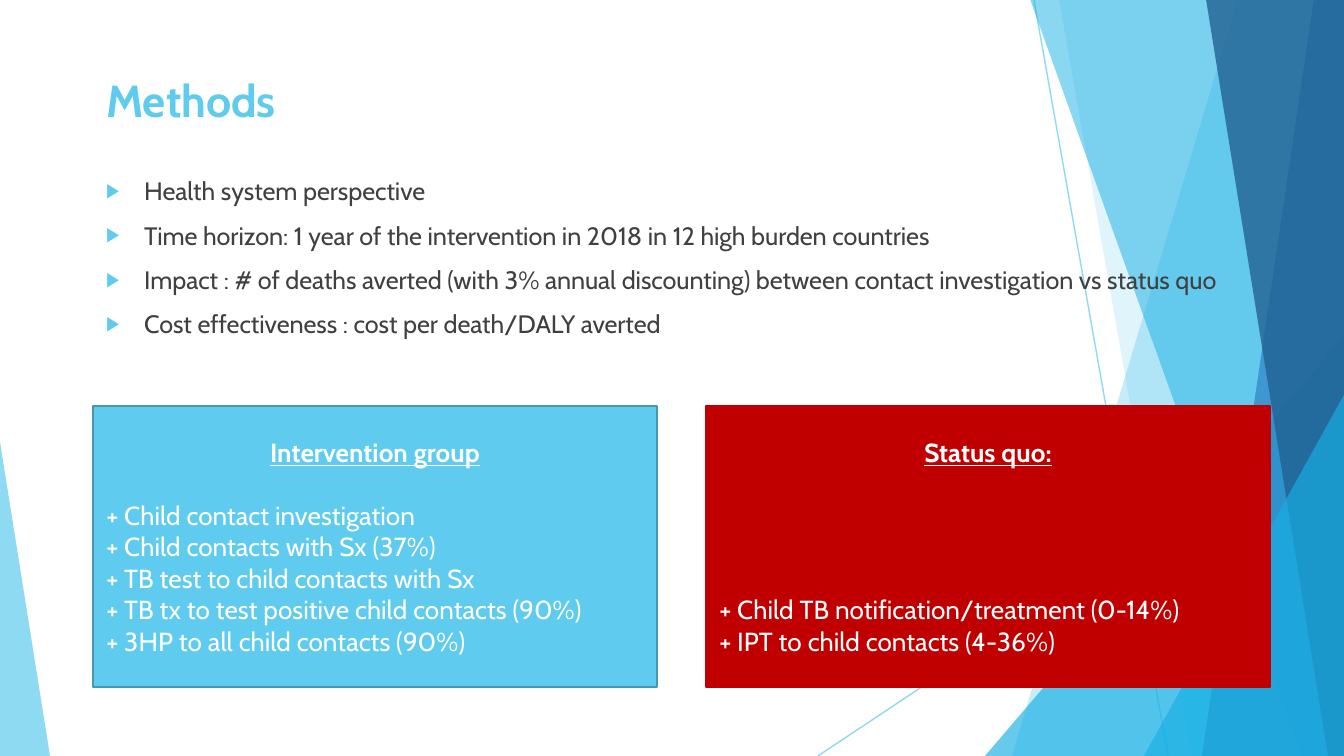
from dataclasses import dataclass

from lxml.etree import SubElement
from pptx import Presentation
from pptx.dml.color import RGBColor
from pptx.enum.shapes import MSO_CONNECTOR, MSO_SHAPE
from pptx.enum.text import MSO_ANCHOR, PP_ALIGN
from pptx.oxml.ns import qn
from pptx.util import Emu, Pt

SCALE = 914400 / 134.4
WIDTH, HEIGHT = 1344, 756


def px(length):
    return Emu(round(length * SCALE))


@dataclass(frozen=True)
class Theme:
    font: str = "Cabin"
    sky: str = "5FCBEF"
    cyan: str = "17B0E4"
    blue: str = "2E83C3"
    navy: str = "226292"
    teal: str = "4696B1"
    red: str = "C00000"
    text: str = "404040"
    white: str = "FFFFFF"
    title_size: float = 24
    body_size: float = 13.5
    card_size: float = 14
    card_line: float = 16.8
    bullet_gap: float = 7.5


class SlideBuilder:
    def __init__(self, theme, slide):
        self.theme = theme
        self.slide = slide

    def set_opacity(self, shape, percent):
        for color in shape.element.iter(qn("a:srgbClr")):
            SubElement(color, qn("a:alpha"), val=str(percent * 1000))

    def fill(self, shape, color, opacity=100):
        shape.shadow.inherit = False
        shape.fill.solid()
        shape.fill.fore_color.rgb = RGBColor.from_string(color)
        shape.line.fill.background()
        if opacity < 100:
            self.set_opacity(shape, opacity)

    def line(self, start, end):
        connector = self.slide.shapes.add_connector(
            MSO_CONNECTOR.STRAIGHT, *map(px, start + end))
        connector.line.width = Pt(0.75)
        connector.line.color.rgb = RGBColor.from_string(self.theme.sky)
        self.set_opacity(connector, 70)
        SubElement(connector.element.spPr, qn("a:effectLst"))

    def band(self, top_left, bottom_left, color, opacity):
        builder = self.slide.shapes.build_freeform(top_left, -1, scale=SCALE)
        builder.add_line_segments(
            [(WIDTH, -1), (WIDTH, HEIGHT), (bottom_left, HEIGHT)])
        self.fill(builder.convert_to_shape(), color, opacity)

    def triangle(self, left, top, width, peak, color, opacity):
        shape = self.slide.shapes.add_shape(
            MSO_SHAPE.ISOSCELES_TRIANGLE,
            *map(px, (left, top, width, HEIGHT - top)))
        shape.adjustments[0] = peak
        self.fill(shape, color, opacity)

    def paragraph(self, frame, index, text, color, font_format, paragraph_format):
        paragraph = frame.add_paragraph() if index else frame.paragraphs[0]
        for name, value in paragraph_format.items():
            setattr(paragraph, name, value)
        run = paragraph.add_run()
        run.text = text
        for name, value in {"name": self.theme.font, **font_format}.items():
            setattr(run.font, name, value)
        run.font.color.rgb = RGBColor.from_string(color)
        return paragraph

    def text_frame(self, box, anchor):
        frame = self.slide.shapes.add_textbox(*map(px, box)).text_frame
        frame.word_wrap = True
        frame.vertical_anchor = anchor
        return frame

    def title(self, box, text):
        frame = self.text_frame(box, MSO_ANCHOR.BOTTOM)
        self.paragraph(frame, 0, text, self.theme.sky,
                       {"size": Pt(self.theme.title_size), "bold": True}, {})

    def bullets(self, box, lines):
        frame = self.text_frame(box, MSO_ANCHOR.TOP)
        for index, text in enumerate(lines):
            paragraph = self.paragraph(
                frame, index, text, self.theme.text,
                {"size": Pt(self.theme.body_size)},
                {"space_before": Pt(self.theme.bullet_gap)})
            properties = paragraph._p.get_or_add_pPr()
            properties.set("marL", str(px(38)))
            properties.set("indent", str(-px(38)))
            color = SubElement(properties, qn("a:buClr"))
            SubElement(color, qn("a:srgbClr"), val=self.theme.sky)
            SubElement(properties, qn("a:buSzPct"), val="80000")
            SubElement(properties, qn("a:buFont"), typeface="Arial")
            SubElement(properties, qn("a:buChar"), char="▶")

    def card(self, box, color, border, heading, lines, gap_lines):
        shape = self.slide.shapes.add_shape(MSO_SHAPE.RECTANGLE, *map(px, box))
        self.fill(shape, color)
        shape.line.width = Pt(1.5)
        shape.line.color.rgb = RGBColor.from_string(border)
        frame = shape.text_frame
        frame.word_wrap = True
        frame.vertical_anchor = MSO_ANCHOR.MIDDLE
        size = Pt(self.theme.card_size)
        self.paragraph(frame, 0, heading, self.theme.white,
                       {"size": size, "bold": True, "underline": True},
                       {"alignment": PP_ALIGN.CENTER})
        for index, text in enumerate(lines, 1):
            gap = gap_lines * self.theme.card_line if index == 1 else 0
            self.paragraph(frame, index, text, self.theme.white, {"size": size},
                           {"alignment": PP_ALIGN.LEFT, "space_before": Pt(gap)})


def main():
    presentation = Presentation()
    presentation.slide_width = px(WIDTH)
    presentation.slide_height = px(HEIGHT)
    theme = Theme()
    slide = presentation.slides.add_slide(presentation.slide_layouts[6])
    builder = SlideBuilder(theme, slide)

    builder.line((1034, 0), (1168, HEIGHT))
    builder.line((WIDTH, 406), (818, HEIGHT))
    builder.band(1238, 1012, theme.sky, 36)
    builder.band(1059, 1192, theme.sky, 20)
    builder.triangle(985, 336, 359, 1, theme.cyan, 66)
    builder.band(1030, 1301, theme.cyan, 50)
    builder.band(1314, 1202, theme.blue, 70)
    builder.band(1206, 1328, theme.navy, 80)
    builder.triangle(1144, 395, 200, 1, theme.cyan, 66)
    builder.triangle(0, 442, 50, 0, theme.sky, 70)

    builder.title((93, 62, 1159, 71), "Methods")
    builder.bullets((93, 169, 1159, 199), [
        "Health system perspective",
        "Time horizon: 1 year of the intervention in 2018 in 12 high burden countries",
        "Impact : # of deaths averted (with 3% annual discounting) between "
        "contact investigation vs status quo",
        "Cost effectiveness : cost per death/DALY averted",
    ])

    cards = [
        (theme.sky, theme.teal, "Intervention group", [
            "+ Child contact investigation",
            "+ Child contacts with Sx (37%)",
            "+ TB test to child contacts with Sx",
            "+ TB tx to test positive child contacts (90%)",
            "+ 3HP to all child contacts (90%)",
        ], 1),
        (theme.red, theme.red, "Status quo:", [
            "+ Child TB notification/treatment (0-14%)",
            "+ IPT to child contacts (4-36%)",
        ], 4),
    ]
    for column, card in enumerate(cards):
        builder.card((93 + column * 613, 406, 564, 281), *card)

    presentation.save("out.pptx")


if __name__ == "__main__":
    main()
